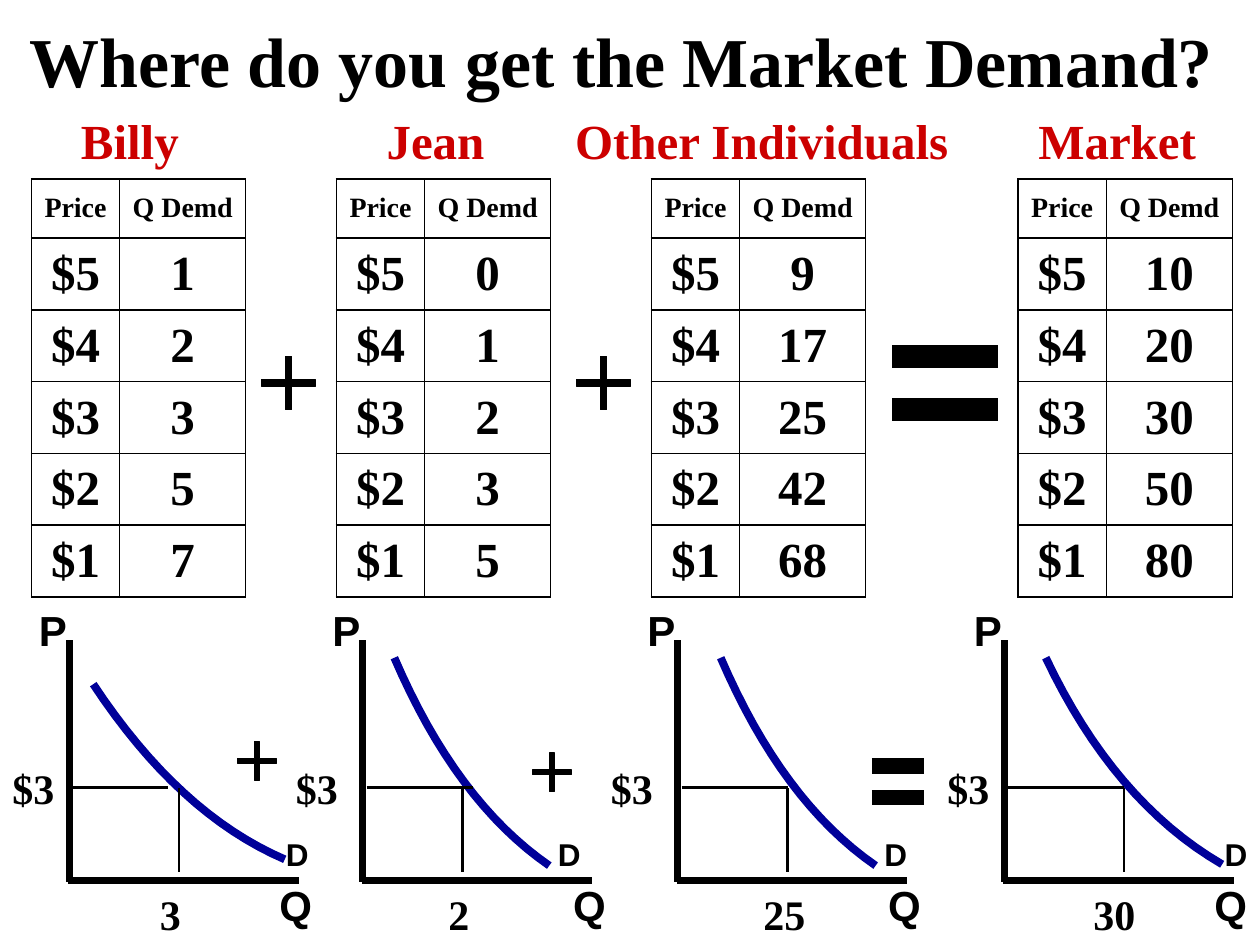
"""Build the slide that sums individual demand into market demand."""
from dataclasses import dataclass
from lxml import etree
from pptx import Presentation
from pptx.dml.color import RGBColor
from pptx.enum.shapes import MSO_CONNECTOR, MSO_SHAPE
from pptx.enum.text import MSO_ANCHOR, MSO_AUTO_SIZE, PP_ALIGN
from pptx.oxml.ns import qn
from pptx.util import Inches, Pt

STRAIGHT = MSO_CONNECTOR.STRAIGHT
PLUS = MSO_SHAPE.MATH_PLUS
CENTER, LEFT = PP_ALIGN.CENTER, PP_ALIGN.LEFT
MIDDLE, TOP = MSO_ANCHOR.MIDDLE, MSO_ANCHOR.TOP
PRICES = ["$5", "$4", "$3", "$2", "$1"]

TABLES = [
    ("Billy ", 0.33, 1.5, 0.25, [1, 2, 3, 5, 7]),
    ("Jean ", 2.67, 1.67, 2.67, [0, 1, 2, 3, 5]),
    ("Other Individuals ", 4.42, 3.25, 5.17, [9, 17, 25, 42, 68]),
    ("Market ", 8.08, 1.67, 8.08, [10, 20, 30, 50, 80]),
]


@dataclass
class Graph:
    axis: float
    price_x: float
    price_end: float
    drop_x: float
    quantity: str
    quantity_x: float
    demand_x: float
    curve: tuple


GRAPHS = [
    Graph(0.55, 0, 1.33, 1.42, "3", 1.17, 2.17, ((0.74, 5.43), (1.42, 6.46), (2.26, 6.82))),
    Graph(2.88, 2.25, 3.75, 3.67, "2", 3.46, 4.33, ((3.13, 5.22), (3.62, 6.36), (4.36, 6.87))),
    Graph(5.38, 4.75, 6.25, 6.25, "25", 5.96, 6.92, ((5.72, 5.22), (6.21, 6.36), (6.95, 6.87))),
    Graph(7.97, 7.42, 8.92, 8.92, "30", 8.58, 9.62, ((8.3, 5.22), (8.84, 6.36), (9.7, 6.86))),
]


def rgb(value):
    """Turn a hex string into a colour."""
    return RGBColor.from_string(value)


def write(tf, text, size=24, font="Times New Roman", color="000000", align=LEFT):
    """Put one formatted bold paragraph into a text frame."""
    p = tf.paragraphs[0]
    p.alignment = align
    r = p.add_run()
    r.text = text
    r.font.size, r.font.name, r.font.bold = Pt(size), font, True
    r.font.color.rgb = rgb(color)


def bezier(points, steps=16):
    """Sample a quadratic curve given by start, control and end."""
    samples = []
    for i in range(steps + 1):
        t = i / steps
        weights = ((1 - t) ** 2, 2 * t * (1 - t), t ** 2)
        samples.append(tuple(sum(w * pt[k] for w, pt in zip(weights, points)) for k in (0, 1)))
    return samples


class Board:
    """Hold the style and the slide being built."""

    ink, accent, curve_color = "000000", "CC0000", "000099"

    def __init__(self, prs):
        """Add a title-only slide."""
        self.s = prs.slides.add_slide(prs.slide_layouts[5])

    def title(self, text):
        """Place and fill the title placeholder."""
        sp = self.s.shapes.title
        sp.left, sp.top, sp.width, sp.height = Inches(0), Inches(0), Inches(10), Inches(0.94)
        tf = sp.text_frame
        tf.auto_size = MSO_AUTO_SIZE.NONE
        tf.vertical_anchor = MIDDLE
        write(tf, text, size=40, align=CENTER)

    def text(self, text, x, y, w, h, wrap=False, **fmt):
        """Add a text box."""
        tf = self.s.shapes.add_textbox(Inches(x), Inches(y), Inches(w), Inches(h)).text_frame
        tf.word_wrap = wrap
        tf.vertical_anchor = TOP
        write(tf, text, **fmt)

    def line(self, x1, y1, x2, y2, width):
        """Add a straight line without a shadow."""
        sp = self.s.shapes.add_connector(STRAIGHT, Inches(x1), Inches(y1), Inches(x2), Inches(y2))
        sp.line.color.rgb = rgb(self.ink)
        sp.line.width = Pt(width)
        etree.SubElement(sp._element.spPr, qn("a:effectLst"))

    def plus(self, x, y, size):
        """Add a plus sign."""
        sp = self.s.shapes.add_shape(PLUS, Inches(x), Inches(y), Inches(size), Inches(size))
        sp.adjustments[0] = 0.087
        sp.shadow.inherit = False
        sp.fill.solid()
        sp.fill.fore_color.rgb = rgb(self.ink)
        sp.line.color.rgb = rgb(self.ink)
        sp.line.width = Pt(0.75)

    def equals(self, x, y, w, gap, width):
        """Add an equals sign made of two thick lines."""
        for bar_y in (y, y + gap):
            self.line(x, bar_y, x + w, bar_y, width)

    def curve(self, points):
        """Add a demand curve as an open outline."""
        start, *rest = [(Inches(x), Inches(y)) for x, y in bezier(points)]
        fb = self.s.shapes.build_freeform(*start)
        fb.add_line_segments(rest, close=False)
        sp = fb.convert_to_shape()
        sp.shadow.inherit = False
        sp.fill.background()
        sp.line.color.rgb = rgb(self.curve_color)
        sp.line.width = Pt(4.5)

    def cell(self, cell, text, size):
        """Fill one table cell and draw its borders."""
        cell.margin_left = cell.margin_right = cell.margin_top = cell.margin_bottom = 0
        cell.vertical_anchor = MIDDLE
        write(cell.text_frame, text, size=size, align=CENTER)
        tc_pr = cell._tc.get_or_add_tcPr()
        for side in ("a:lnL", "a:lnR", "a:lnT", "a:lnB"):
            ln = etree.SubElement(tc_pr, qn(side), w=str(Pt(1)))
            fill = etree.SubElement(ln, qn("a:solidFill"))
            etree.SubElement(fill, qn("a:srgbClr"), val=self.ink)
        cell.fill.background()

    def table(self, x, quantities):
        """Add a demand schedule."""
        rows = [("Price", "Q Demd"), *zip(PRICES, map(str, quantities))]
        tbl = self.s.shapes.add_table(
            len(rows), 2, Inches(x), Inches(1.42), Inches(1.7), Inches(3.32)).table
        tbl.first_row = tbl.horz_banding = False
        tbl.columns[0].width, tbl.columns[1].width = Inches(0.7), Inches(1)
        for i, row in enumerate(rows):
            tbl.rows[i].height = Inches(0.57 if i else 0.47)
            for j, text in enumerate(row):
                self.cell(tbl.cell(i, j), text, 28 if i else 16)

    def graph(self, g):
        """Add axes, demand curve, guide lines and labels."""
        self.line(g.axis, 5.08, g.axis, 7, 4)
        self.line(g.axis - 0.01, 6.99, g.axis + 1.82, 6.99, 4)
        self.curve(g.curve)
        self.line(g.axis + 0.03, 6.25, g.price_end, 6.25, 1.5)
        self.line(g.drop_x, 6.92, g.drop_x, 6.25, 1.5)
        self.text("P", g.axis - 0.34, 4.75, 0.42, 0.5, font="Arial")
        self.text("Q", g.axis + 1.57, 6.93, 0.46, 0.5, font="Arial")
        self.text("D", g.demand_x, 6.58, 0.38, 0.4, size=18, font="Arial")
        self.text("$3", g.price_x, 6, 0.53, 0.5)
        self.text(g.quantity, g.quantity_x, 7, 0.21 + 0.16 * len(g.quantity), 0.5)


def main():
    """Build and save the slide."""
    prs = Presentation()
    prs.slide_width, prs.slide_height = Inches(10), Inches(7.5)
    board = Board(prs)
    board.title("Where do you get the Market Demand? ")
    for name, name_x, name_w, x, quantities in TABLES:
        board.text(name, name_x, 0.83, name_w, 0.57, wrap=True,
                   size=28, color=board.accent, align=CENTER)
        board.table(x, quantities)
    for g in GRAPHS:
        board.graph(g)
    for x, y, size in [(2, 2.75, 0.58), (4.5, 2.75, 0.58), (1.83, 5.83, 0.42), (4.17, 5.92, 0.42)]:
        board.plus(x, y, size)
    board.equals(7.08, 2.83, 0.84, 0.42, 13)
    board.equals(6.92, 6.08, 0.41, 0.25, 9)
    prs.save("out.pptx")


if __name__ == "__main__":
    main()
